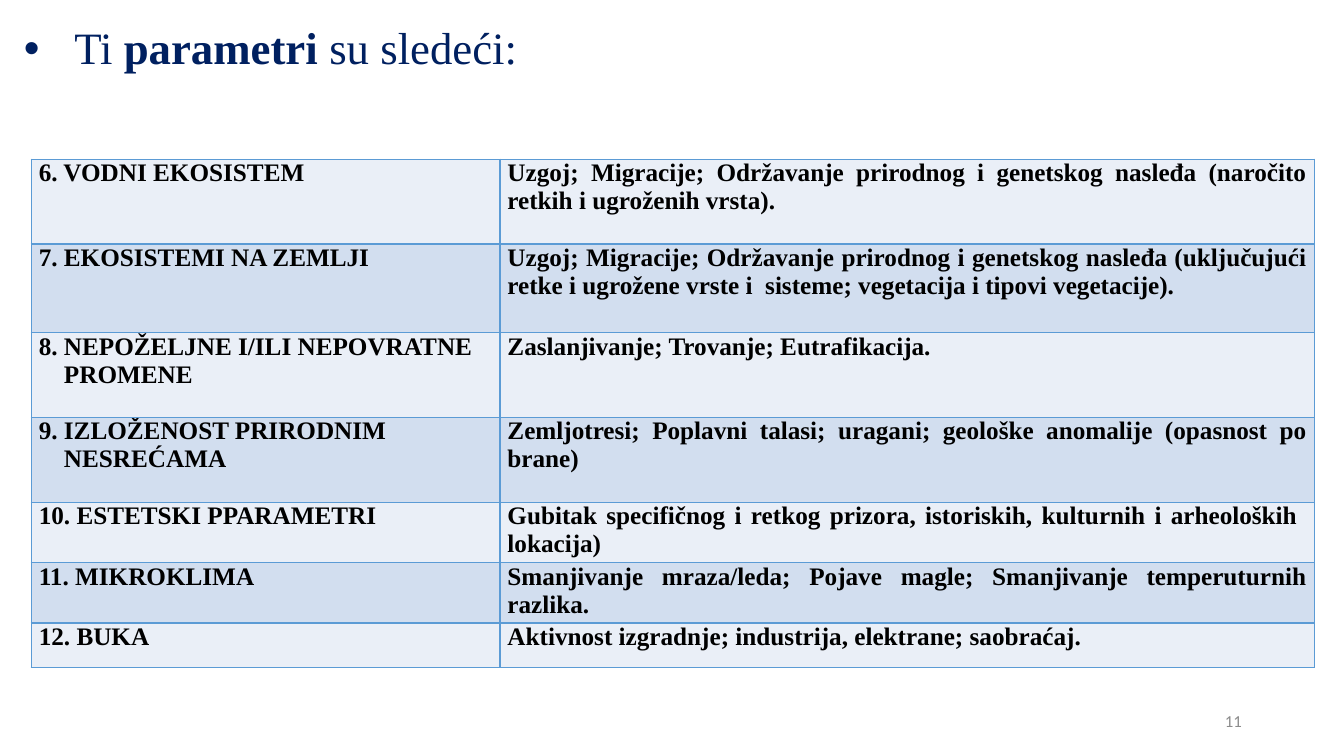
from lxml.etree import SubElement
from pptx import Presentation
from pptx.dml.color import RGBColor
from pptx.enum.text import MSO_ANCHOR as Anchor, PP_ALIGN as Align
from pptx.oxml import parse_xml
from pptx.oxml.ns import nsdecls, qn
from pptx.util import Pt

COLORS = {"title": "002060", "text": "000000", "number": "8C8C8C",
          "border": "5B9BD5", "light": "EAEFF7", "dark": "D2DEEF"}
SERIF = "Times New Roman"
COLUMN_WIDTHS = (334.8, 581.8)
# Row height, then the paragraphs of the left cell and the text of the right one
PARAMETERS = [
    (60.5, ["6. VODNI EKOSISTEM"],
     "Uzgoj; Migracije; Održavanje prirodnog i genetskog nasleđa "
     "(naročito retkih i ugroženih vrsta)."),
    (63.4, ["7. EKOSISTEMI NA ZEMLJI"],
     "Uzgoj; Migracije; Održavanje prirodnog i genetskog nasleđa (uključujući "
     "retke i ugrožene vrste i  sisteme; vegetacija i tipovi vegetacije)."),
    (60.5, ["8. NEPOŽELJNE I/ILI NEPOVRATNE", "PROMENE"],
     "Zaslanjivanje; Trovanje; Eutrafikacija."),
    (60.5, ["9. IZLOŽENOST PRIRODNIM", "NESREĆAMA"],
     "Zemljotresi; Poplavni talasi; uragani; geološke anomalije (opasnost po brane)"),
    (31.7, ["10. ESTETSKI PPARAMETRI"],
     "Gubitak specifičnog i retkog prizora, istoriskih, kulturnih i "
     "arheoloških  lokacija)"),
    (31.7, ["11. MIKROKLIMA"],
     "Smanjivanje mraza/leda; Pojave magle; Smanjivanje temperuturnih razlika."),
    (31.7, ["12. BUKA"],
     "Aktivnost izgradnje; industrija, elektrane; saobraćaj."),
]


def set_all(target, values):
    for name, value in values.items():
        setattr(target, name, value)


class SlideBuilder:
    def __init__(self, prs):
        self.s = prs.slides.add_slide(prs.slide_layouts[6])

    def run(self, p, text, size, color, name=SERIF, bold=False):
        r = p.add_run()
        r.text = text
        set_all(r.font, {"size": Pt(size), "name": name, "bold": bold})
        r.font.color.rgb = RGBColor.from_string(COLORS[color])

    def text_box(self, x, y, w, h):
        """Add a middle-anchored box and return its first paragraph."""
        sp = self.s.shapes.add_textbox(Pt(x), Pt(y), Pt(w), Pt(h))
        set_all(sp.text_frame, {"word_wrap": True, "vertical_anchor": Anchor.MIDDLE})
        return sp.text_frame.paragraphs[0]

    def indent(self, p, left, first=0):
        pPr = p._p.get_or_add_pPr()
        pPr.set("marL", str(Pt(left)))
        pPr.set("indent", str(Pt(first)))
        return pPr

    def title(self, parts):
        p = self.text_box(10, 10, 940.3, 51.8)
        pPr = self.indent(p, 36, -36)
        SubElement(pPr, qn("a:buFont"), typeface="Arial")
        SubElement(pPr, qn("a:buChar"), char="•")
        p.line_spacing = 0.9
        for text, bold in parts:
            self.run(p, text, 32, "title", bold=bold)

    def page_number(self, number):
        p = self.text_box(678.2, 500.4, 216, 28.8)
        p.alignment = Align.RIGHT
        self.run(p, number, 12, "number", "Calibri")

    def borders(self, cell, top):
        tcPr = cell._tc.get_or_add_tcPr()
        for i, (side, width) in enumerate(zip("LRTB", (1, 1, top, 1))):
            tcPr.insert(i, parse_xml(
                f'<a:ln{side} {nsdecls("a")} w="{Pt(width)}"><a:solidFill>'
                f'<a:srgbClr val="{COLORS["border"]}"/></a:solidFill></a:ln{side}>'))

    def cell(self, cell, lines, fill, top):
        set_all(cell, {"margin_left": Pt(5.4), "margin_right": Pt(5.4),
                       "margin_top": 0, "margin_bottom": 0})
        cell.fill.solid()
        cell.fill.fore_color.rgb = RGBColor.from_string(COLORS[fill])
        self.borders(cell, top)
        tf = cell.text_frame
        for i, line in enumerate(lines):
            p = tf.add_paragraph() if i else tf.paragraphs[0]
            p.alignment = Align.JUSTIFY
            if i:
                self.indent(p, 18)
            self.run(p, line, 18, "text", bold=True)

    def table(self, x, y, widths, rows):
        height = sum(row[0] for row in rows)
        table = self.s.shapes.add_table(len(rows), len(widths), Pt(x), Pt(y),
                                        Pt(sum(widths)), Pt(height)).table
        set_all(table, {"first_row": False, "horz_banding": False})
        for column, width in zip(table.columns, widths):
            column.width = Pt(width)
        for i, (row_height, name, details) in enumerate(rows):
            table.rows[i].height = Pt(row_height)
            fill = "dark" if i % 2 else "light"
            top = 2 if i == len(rows) - 1 else 1
            for j, lines in enumerate((name, [details])):
                self.cell(table.cell(i, j), lines, fill, top)


def main():
    prs = Presentation()
    set_all(prs, {"slide_width": Pt(960), "slide_height": Pt(540)})
    slide = SlideBuilder(prs)
    slide.title([("Ti ", False), ("parametri ", True), ("su sledeći:", False)])
    slide.table(22.3, 113.8, COLUMN_WIDTHS, PARAMETERS)
    slide.page_number("11")
    prs.save("out.pptx")


if __name__ == "__main__":
    main()
